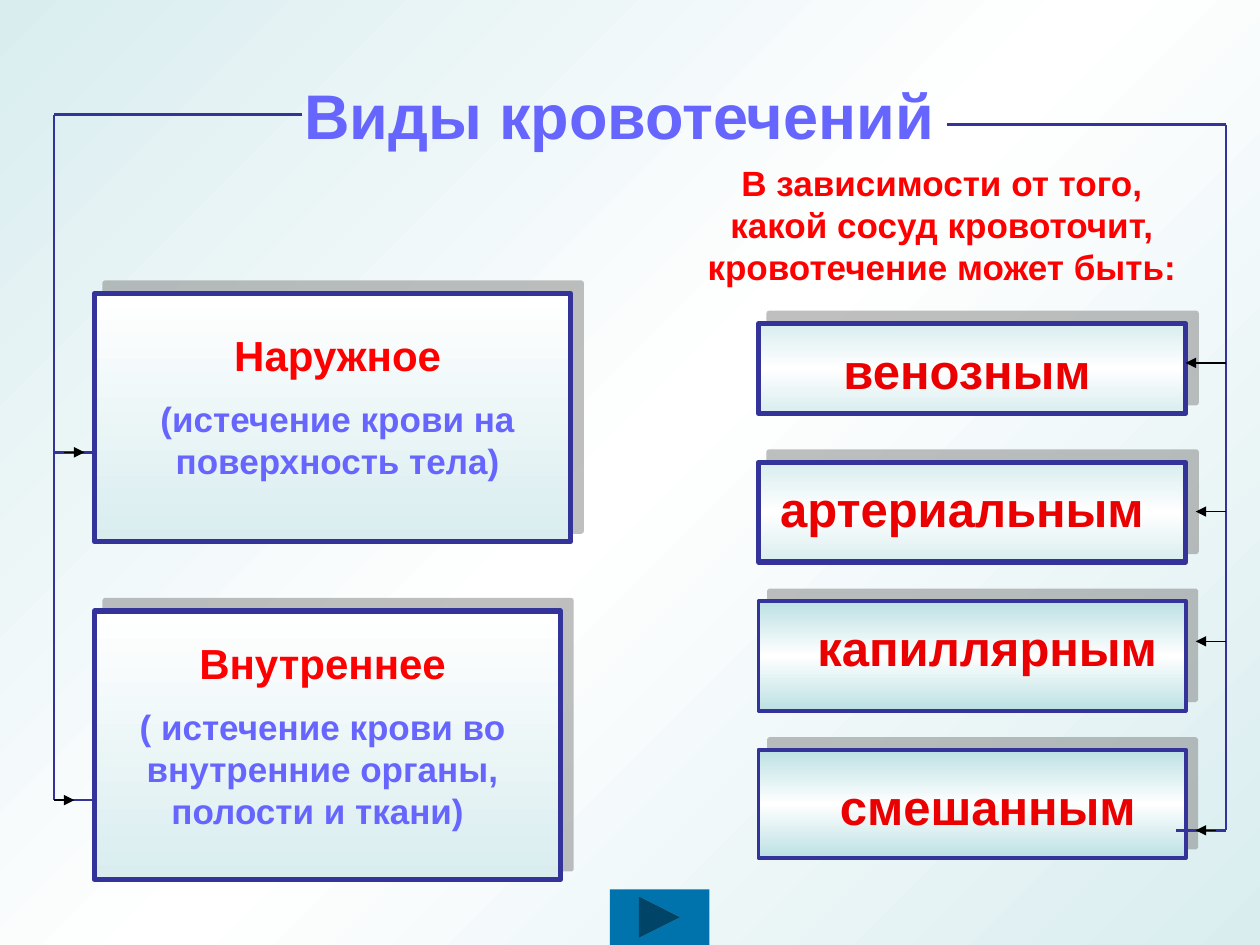
"""Build a slide on the kinds of bleeding, with framed cards and bracket lines."""
from copy import deepcopy
from lxml import etree
from pptx import Presentation
from pptx.dml.color import RGBColor
from pptx.enum.shapes import MSO_CONNECTOR as LINK, MSO_SHAPE as SHAPE
from pptx.enum.text import MSO_ANCHOR as ANCHOR, PP_ALIGN as ALIGN
from pptx.oxml import parse_xml
from pptx.oxml.ns import nsdecls, qn
from pptx.util import Inches, Pt

colour = RGBColor.from_string
RED, DEEP_RED, VIOLET, NAVY, BLACK = "FF0000", "EA0000", "6666FF", "333399", "000000"
PALE = ["D9EDEF", "FFFFFF", "D9EDEF"]
TEAL = ["BBE0E3", "FFFFFF", "BBE0E3"]
FADE = ["FFFFFF", "D9EDEF"]
SHADOW = (
    f'<a:outerShdw {nsdecls("a")} dist="107950" dir="18900000" algn="ctr" rotWithShape="0">'
    '<a:srgbClr val="808080"><a:alpha val="50000"/></a:srgbClr></a:outerShdw>'
)

deck = Presentation()
deck.slide_width, deck.slide_height = Inches(10), Inches(7.5)
COLUMN, ROW = deck.slide_width / 100, deck.slide_height / 75
page = deck.slides.add_slide(deck.slide_layouts[5])


def paint_gradient(fill, owner, colours, angle):
    """Fill with evenly spaced colours; the angle runs counter-clockwise."""
    fill.gradient()
    fill.gradient_angle = angle
    stops = owner.find(".//" + qn("a:gsLst"))
    for _ in colours[2:]:
        stops.append(deepcopy(stops[0]))
    for index, (stop, value) in enumerate(zip(fill.gradient_stops, colours)):
        stop.color.rgb = colour(value)
        stop.position = index / (len(colours) - 1)


def write_text(box, place, lines):
    """Place a box on the grid and write its (text, size, colour) lines centred."""
    left, top, width, height = place
    layout = {"left": left * COLUMN, "top": top * ROW, "width": width * COLUMN, "height": height * ROW}
    for name, value in layout.items():
        setattr(box, name, int(value))
    frame = box.text_frame
    frame.word_wrap = True
    for index, (text, size, value) in enumerate(lines):
        para = frame.add_paragraph() if index else frame.paragraphs[0]
        para.alignment = ALIGN.CENTER
        para.space_before = Pt(size / 2 if index else 0)
        span = para.add_run()
        span.text = text
        for name, setting in {"name": "Arial", "size": Pt(size), "bold": True}.items():
            setattr(span.font, name, setting)
        span.font.color.rgb = colour(value)


paint_gradient(page.background.fill, page.element, PALE, 315)

title = page.shapes.title
write_text(title, (22.4, 2.8, 53.5, 12.5), [("Виды кровотечений", 36, VIOLET)])
title.text_frame.vertical_anchor = ANCHOR.MIDDLE

cards = [
    ((7.5, 23.3, 37.8, 19.7), FADE, 3, (8.3, 25.7, 37, 13.3),
     [("Наружное", 24, RED), ("(истечение крови на поверхность тела)", 20, VIOLET)]),
    ((7.5, 48.5, 37, 21.3), FADE, 3, (7.5, 50.1, 36.2, 16.7),
     [("Внутреннее", 24, RED),
      ("( истечение крови во внутренние органы, полости и ткани) ", 20, VIOLET)]),
    ((60.2, 25.7, 33.9, 7.1), PALE, 3, (61.8, 26.5, 29.9, 5.7), [("венозным", 28, DEEP_RED)]),
    ((60.2, 36.7, 33.9, 7.9), PALE, 3, (60.2, 37.5, 32.3, 5.7), [("артериальным", 28, DEEP_RED)]),
    ((60.2, 47.7, 33.9, 8.7), TEAL, 2.25, (62.6, 48.5, 31.5, 5.7), [("капиллярным", 28, DEEP_RED)]),
    ((60.2, 59.5, 33.9, 8.6), TEAL, 2.25, (65, 61.1, 26.8, 5.7), [("смешанным", 28, DEEP_RED)]),
]
for (left, top, width, height), colours, weight, place, lines in cards:
    card = page.shapes.add_shape(
        SHAPE.RECTANGLE, int(left * COLUMN), int(top * ROW), int(width * COLUMN), int(height * ROW))
    paint_gradient(card.fill, card.element, colours, 270)
    card.line.color.rgb = colour(NAVY)
    card.line.width = Pt(weight)
    card.shadow.inherit = False
    card.element.spPr.find(qn("a:effectLst")).append(parse_xml(SHADOW))
    write_text(page.shapes.add_textbox(0, 0, 0, 0), place, lines)

write_text(
    page.shapes.add_textbox(0, 0, 0, 0), (53.9, 12.3, 41.7, 11),
    [("В зависимости от того, какой сосуд кровоточит, кровотечение может быть:", 20, RED)])

brackets = [
    (24, 9.1, 4.3, 9.1), (4.3, 9.1, 4.3, 63.5), (4.3, 35.9, 7.5, 35.9), (4.3, 63.5, 7.5, 63.5),
    (75.2, 9.9, 97.3, 9.9), (97.3, 9.9, 97.3, 65.9), (97.3, 65.9, 93.3, 65.9),
]
arrows = [
    (5.1, 35.9, 6.7, 35.9), (4.3, 63.5, 5.9, 63.5), (97.3, 28.8, 94.1, 28.8),
    (97.3, 40.6, 94.9, 40.6), (97.3, 50.9, 94.9, 50.9), (96.5, 65.9, 94.9, 65.9),
]
for routes, value, weight in [(brackets, NAVY, 1.5), (arrows, BLACK, 0.75)]:
    for x1, y1, x2, y2 in routes:
        link = page.shapes.add_connector(
            LINK.STRAIGHT, int(x1 * COLUMN), int(y1 * ROW), int(x2 * COLUMN), int(y2 * ROW))
        link.line.color.rgb = colour(value)
        link.line.width = Pt(weight)
        properties = link.element.spPr
        if routes is arrows:
            etree.SubElement(properties.find(qn("a:ln")), qn("a:tailEnd"), type="triangle")
        etree.SubElement(properties, qn("a:effectLst"))

button = page.shapes.add_shape(
    SHAPE.ACTION_BUTTON_FORWARD_OR_NEXT,
    int(48.4 * COLUMN), int(70.6 * ROW), int(7.9 * COLUMN), int(4.4 * ROW))
button.fill.solid()
button.fill.fore_color.rgb = colour("0073AC")
button.line.fill.background()
button.shadow.inherit = False

deck.save("out.pptx")
